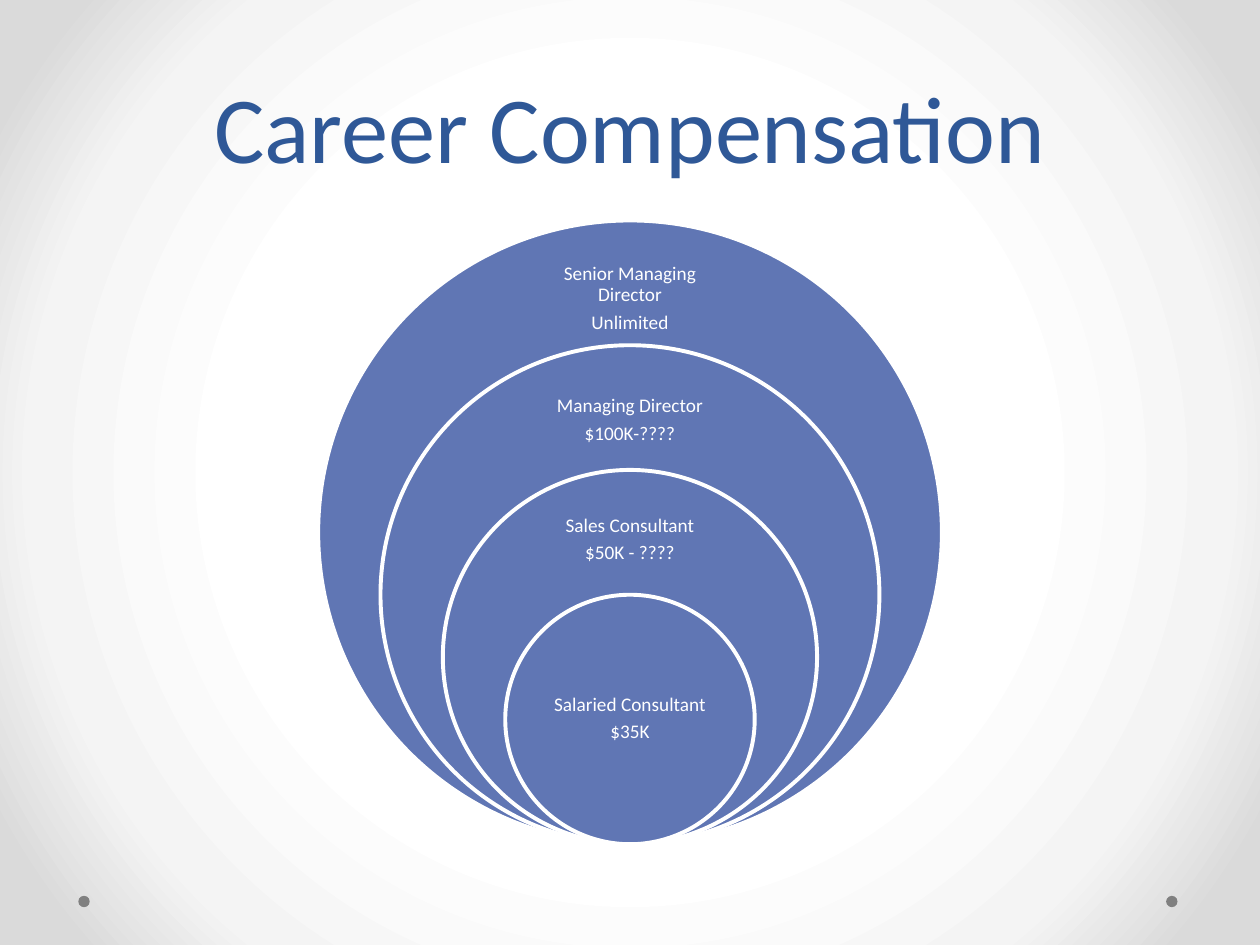
from lxml import etree
from pptx import Presentation
from pptx.dml.color import RGBColor
from pptx.enum.shapes import MSO_SHAPE
from pptx.enum.text import MSO_ANCHOR, PP_ALIGN
from pptx.oxml.ns import qn
from pptx.util import Inches, Pt

OVAL = MSO_SHAPE.OVAL
CENTER = PP_ALIGN.CENTER
MIDDLE, BOTTOM = MSO_ANCHOR.MIDDLE, MSO_ANCHOR.BOTTOM

WIDTH, HEIGHT = 10, 7.5
FONT = "Calibri"
BLUE, WHITE, NAVY, GRAY = "6076B4", "FFFFFF", "2F5897", "808080"
BACKGROUND_STOPS = [(50, "FFFFFF"), (76, "F4F4F4"), (92, "DADADA")]

CIRCLES_BOTTOM = 6.7
LARGEST_DIAMETER = 4.95
DIAMETER_STEP = LARGEST_DIAMETER / 5
# Lines of text, then top and height of the label, from the outer circle inwards
LEVELS = [
    (["Senior Managing Director", "Unlimited"], 2, 0.74),
    (["Managing Director", "$100K-????"], 2.98, 0.71),
    (["Sales Consultant", "$50K - ????"], 3.95, 0.67),
    (["Salaried Consultant", "$35K"], 5.21, 0.99),
]
LABEL_WIDTH = 1.4
DOT_SIZE = 0.09
DOT_TOP = 7.11
DOT_CENTERS = [WIDTH / 15, WIDTH * 0.93]


def color(hex_string):
    return RGBColor.from_string(hex_string)


def set_radial_background(slide, stops):
    """Fill the background with a circular gradient from the slide's center."""
    slide.background.fill.solid()
    solid = slide.element.find(".//" + qn("p:bgPr")).find(qn("a:solidFill"))
    gradient = etree.Element(qn("a:gradFill"), rotWithShape="1")
    stop_list = etree.SubElement(gradient, qn("a:gsLst"))
    for percent, hex_string in stops:
        stop = etree.SubElement(stop_list, qn("a:gs"), pos=str(percent * 1000))
        etree.SubElement(stop, qn("a:srgbClr"), val=hex_string)
    circle = etree.SubElement(gradient, qn("a:path"), path="circle")
    etree.SubElement(circle, qn("a:fillToRect"),
                     {side: "50000" for side in "ltrb"})
    solid.getparent().replace(solid, gradient)


def add_circle(slide, center_x, top, diameter, fill, line=None):
    shape = slide.shapes.add_shape(
        OVAL, Inches(center_x - diameter / 2), Inches(top),
        Inches(diameter), Inches(diameter))
    shape.shadow.inherit = False
    shape.fill.solid()
    shape.fill.fore_color.rgb = color(fill)
    if line:
        shape.line.color.rgb = color(line)
        shape.line.width = Pt(2.25)
    else:
        shape.line.fill.background()


def add_centered_text(slide, lines, top, width, height, size, hex_string,
                      anchor, line_spacing, space_after=0, inset=None):
    box = slide.shapes.add_textbox(
        Inches((WIDTH - width) / 2), Inches(top), Inches(width), Inches(height))
    frame = box.text_frame
    frame.word_wrap = True
    frame.vertical_anchor = anchor
    if inset is not None:
        frame.margin_left = frame.margin_right = Inches(inset)
        frame.margin_top = frame.margin_bottom = Inches(inset)
    for index, line in enumerate(lines):
        paragraph = frame.add_paragraph() if index else frame.paragraphs[0]
        paragraph.alignment = CENTER
        paragraph.line_spacing = line_spacing
        paragraph.space_after = Pt(space_after)
        run = paragraph.add_run()
        run.text = line
        run.font.name = FONT
        run.font.size = Pt(size)
        run.font.color.rgb = color(hex_string)


def add_level(slide, index, lines, label_top, label_height):
    diameter = LARGEST_DIAMETER - index * DIAMETER_STEP
    add_circle(slide, WIDTH / 2, CIRCLES_BOTTOM - diameter, diameter, BLUE, WHITE)
    add_centered_text(slide, lines, label_top, LABEL_WIDTH, label_height, 11,
                      WHITE, MIDDLE, 0.9, space_after=3.85, inset=0.09)


def main():
    presentation = Presentation()
    presentation.slide_width = Inches(WIDTH)
    presentation.slide_height = Inches(HEIGHT)
    slide = presentation.slides.add_slide(presentation.slide_layouts[6])
    set_radial_background(slide, BACKGROUND_STOPS)
    for center_x in DOT_CENTERS:
        add_circle(slide, center_x, DOT_TOP, DOT_SIZE, GRAY)
    for index, level in enumerate(LEVELS):
        add_level(slide, index, *level)
    add_centered_text(slide, ["Career Compensation"], 0.17, WIDTH * 0.9, 1.33,
                      54, NAVY, BOTTOM, Pt(58))
    presentation.save("out.pptx")


if __name__ == "__main__":
    main()
